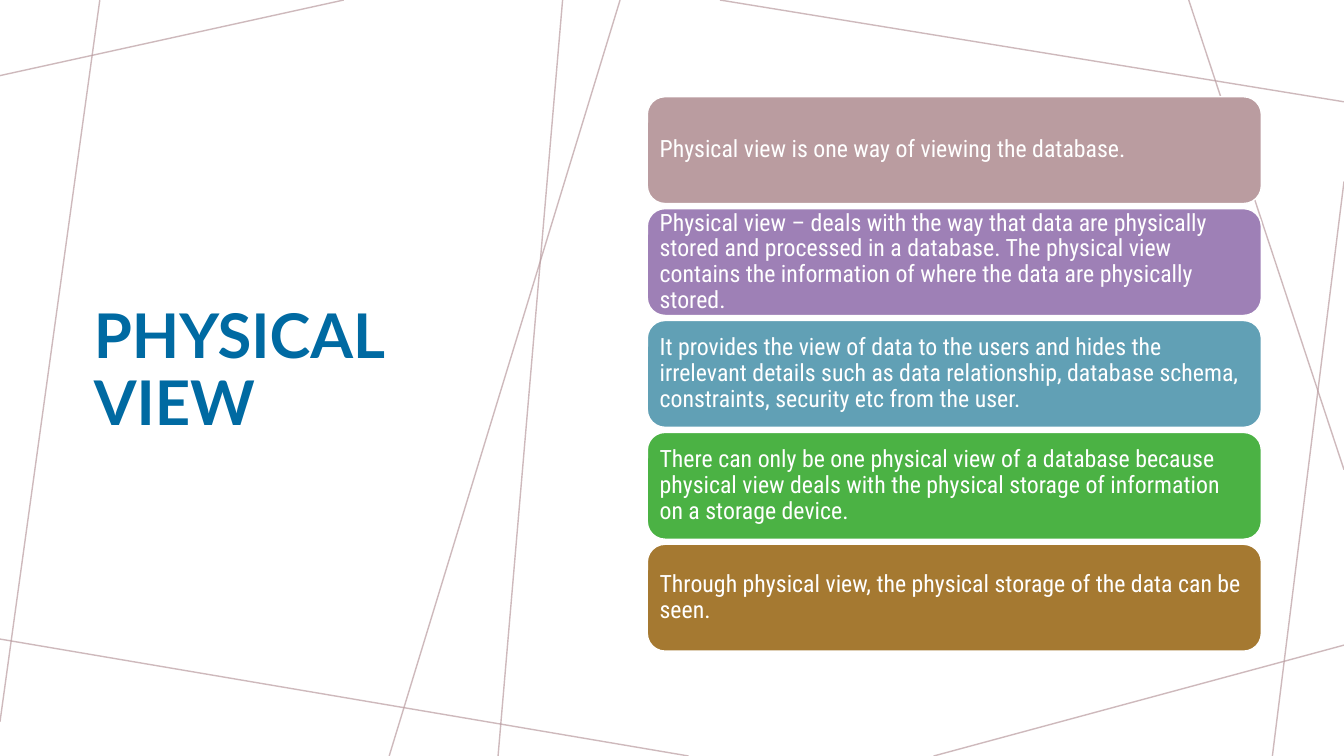
from lxml import etree
from pptx import Presentation
from pptx import util as u
from pptx.dml.color import RGBColor
from pptx.enum import shapes, text
from pptx.oxml.ns import qn

COLORS = {
    "line": "BA9CA0",
    "title": "006AA2",
    "white": "FFFFFF",
    "rose": "BA9CA0",
    "purple": "9E80B6",
    "teal": "61A0B5",
    "green": "4BB244",
    "brown": "A57931",
}

BACKGROUND_LINES = [
    (3.41, 0, 0, 0.75),
    (0.99, 0, 0, 7.16),
    (6.83, 7.5, 0, 6.34),
    (13.33, 6.4, 9.26, 7.5),
    (13.33, 1.8, 12.62, 7.5),
    (13.33, 4.66, 11.79, 0),
    (13.33, 1.01, 7.14, 0),
    (6.15, 0, 3.86, 7.5),
    (5.58, 0, 4.94, 7.5),
]

STATEMENTS = [
    ("rose", "Physical view is one way of viewing the database."),
    ("purple", "Physical view – deals with the way that data are physically stored and "
               "processed in a database. The physical view contains the information of "
               "where the data are physically stored."),
    ("teal", "It provides the view of data to the users and hides the irrelevant details "
             "such as data relationship, database schema, constraints, security etc from "
             "the user."),
    ("green", "There can only be one physical view of a database because physical view "
              "deals with the physical storage of information on a storage device."),
    ("brown", "Through physical view, the physical storage of the data can be seen."),
]

CARD_LEFT, CARD_TOP, CARD_WIDTH, CARD_HEIGHT = 6.42, 0.96, 6.09, 1.06
CARD_STEP = 1.11


def rgb(name):
    return RGBColor.from_string(COLORS[name])


def format_paragraph(paragraph, font_name, size, color, bold=False):
    paragraph.alignment = text.PP_ALIGN.LEFT
    paragraph.line_spacing = 0.9
    font = paragraph.font
    font.name = font_name
    font.size = u.Pt(size)
    font.bold = bold
    font.color.rgb = rgb(color)


def add_background_line(slide, ends):
    line = slide.shapes.add_connector(
        shapes.MSO_CONNECTOR.STRAIGHT, *(u.Inches(end) for end in ends))
    line.line.width = u.Pt(1)
    line.line.color.rgb = rgb("line")
    properties = line._element.spPr
    color = properties.find(".//" + qn("a:srgbClr"))
    etree.SubElement(color, qn("a:alpha"), val="70000")
    etree.SubElement(properties, qn("a:effectLst"))


def format_title(slide, wording):
    title = slide.shapes.title
    title.left, title.top = u.Inches(0.83), u.Inches(0.99)
    title.width, title.height = u.Inches(4.07), u.Inches(5.4)
    frame = title.text_frame
    frame.text = wording
    frame.word_wrap = True
    frame.auto_size = text.MSO_AUTO_SIZE.NONE
    frame.vertical_anchor = text.MSO_ANCHOR.MIDDLE
    format_paragraph(frame.paragraphs[0], "Lato", 44, "title", bold=True)


def add_card(slide, top, color, statement):
    card = slide.shapes.add_shape(
        shapes.MSO_SHAPE.ROUNDED_RECTANGLE,
        u.Inches(CARD_LEFT), u.Inches(top), u.Inches(CARD_WIDTH), u.Inches(CARD_HEIGHT))
    card.shadow.inherit = False
    card.fill.solid()
    card.fill.fore_color.rgb = rgb(color)
    card.line.color.rgb = rgb("white")
    card.line.width = u.Pt(1)
    frame = card.text_frame
    frame.text = statement
    frame.word_wrap = True
    frame.vertical_anchor = text.MSO_ANCHOR.MIDDLE
    frame.margin_left = frame.margin_right = u.Inches(0.07)
    frame.margin_top = frame.margin_bottom = u.Inches(0.07)
    format_paragraph(frame.paragraphs[0], "Roboto Condensed", 17, "white")


def main():
    deck = Presentation()
    deck.slide_width, deck.slide_height = u.Inches(13.33), u.Inches(7.5)
    slide = deck.slides.add_slide(deck.slide_layouts.get_by_name("Title Only"))
    format_title(slide, "PHYSICAL VIEW")
    for ends in BACKGROUND_LINES:
        add_background_line(slide, ends)
    for row, (color, statement) in enumerate(STATEMENTS):
        add_card(slide, CARD_TOP + row * CARD_STEP, color, statement)
    deck.save("out.pptx")


if __name__ == "__main__":
    main()
